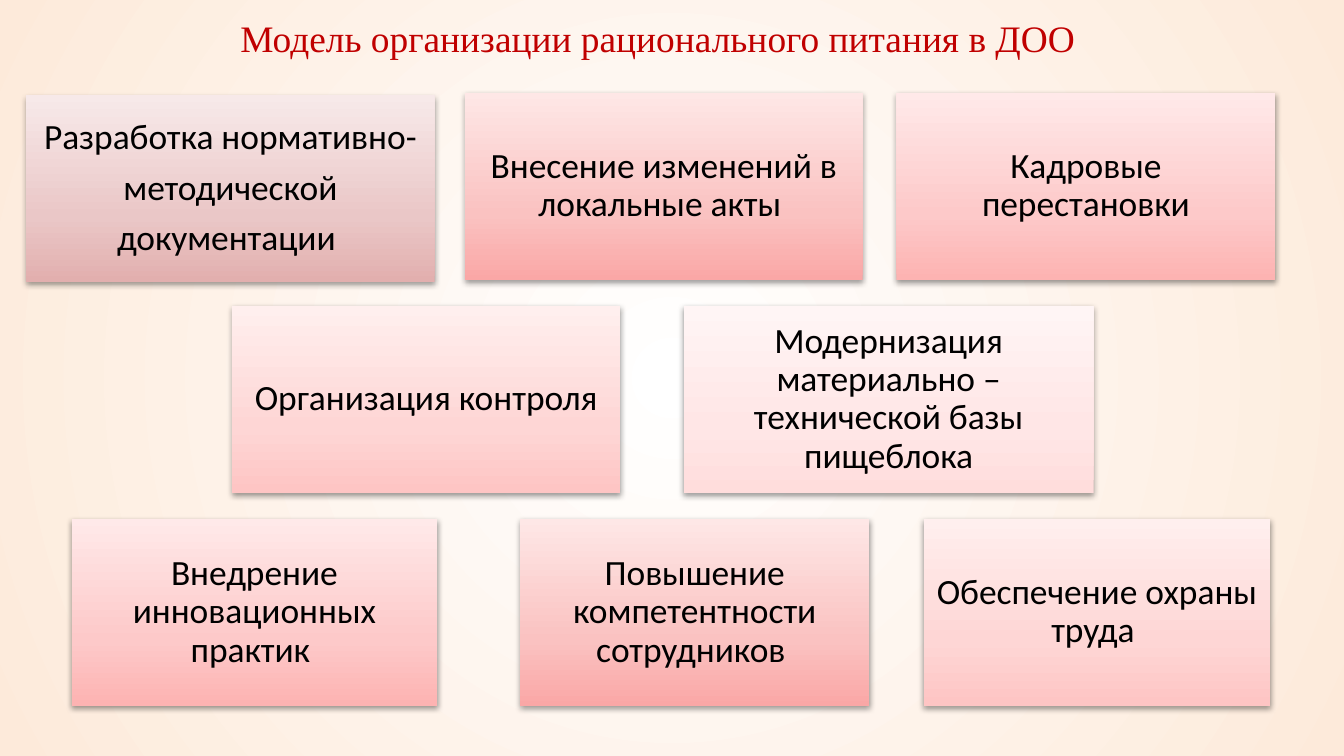
from pptx import Presentation, oxml, util as u
from pptx.dml.color import RGBColor
from pptx.enum import shapes, text
from pptx.oxml import ns

WIDTH = u.Inches(10)
HEIGHT = WIDTH * 9 // 16
COLUMN, ROW = WIDTH / 100, HEIGHT / 100
FIRST_ROW, ROW_STEP, CARD_HEIGHT = 12.3, 28.17, 24.71

MAUVE = ("E2AFAE", "EAC7C7", "F7E9E9")
CORAL = ("FAA7A6", "FAC2C1", "FEE7E6")
ROSE = ("FDB3B2", "FDC9C9", "FFE9E9")
PINK = ("FEC5C4", "FED6D5", "FFEFEE")
BLUSH = ("FFDDDC", "FFE6E6", "FFF5F5")

CARD_ROWS = [
    [
        (1.95, 30.4, 0.3, MAUVE, "Разработка нормативно-\nметодической\nдокументации "),
        (34.6, 29.6, 0, CORAL, "Внесение изменений в локальные акты "),
        (66.7, 28.2, 0, ROSE, "Кадровые перестановки"),
    ],
    [
        (17.26, 28.9, 0, PINK, "Организация контроля"),
        (50.87, 30.5, 0, BLUSH, "Модернизация материально – технической базы пищеблока"),
    ],
    [
        (5.33, 27.2, 0, ROSE, "Внедрение инновационных практик "),
        (38.7, 26, 0, CORAL, "Повышение компетентности сотрудников "),
        (68.72, 25.8, 0, PINK, "Обеспечение охраны труда "),
    ],
]


def color(value):
    """Turn a hex string into a colour."""
    return RGBColor.from_string(value)


def grid_box(left, top, width, height):
    """Convert columns and rows into slide lengths."""
    return tuple(round(v) for v in (left * COLUMN, top * ROW, width * COLUMN, height * ROW))


def set_gradient(fill, owner, stops, direction):
    """Fill an owner element with gradient stops in the given direction."""
    fill.solid()
    solid = owner.find(".//" + ns.qn("a:solidFill"))
    marks = "".join(
        f'<a:gs pos="{share * 1000}"><a:srgbClr val="{value}"/></a:gs>' for share, value in stops
    )
    gradient = oxml.parse_xml(
        f'<a:gradFill {ns.nsdecls("a")} rotWithShape="1"><a:gsLst>{marks}</a:gsLst>{direction}</a:gradFill>'
    )
    solid.getparent().replace(solid, gradient)


def add_shadow(shape):
    """Give a shape a soft shadow below it."""
    shape.shadow.inherit = False
    effects = shape._element.spPr.find(ns.qn("a:effectLst"))
    effects.append(oxml.parse_xml(
        f'<a:outerShdw {ns.nsdecls("a")} blurRad="40000" dist="20000" dir="5400000" rotWithShape="0">'
        '<a:srgbClr val="000000"><a:alpha val="38000"/></a:srgbClr></a:outerShdw>'
    ))


def style_font(font, name, size, value):
    """Set the face, size and colour of a font."""
    font.name, font.size = name, u.Pt(size)
    font.color.rgb = color(value)


def add_backdrop(page):
    """Paint the radial page background."""
    set_gradient(
        page.background.fill, page.element, [(0, "FFFFFF"), (100, "FDEADA")],
        '<a:path path="circle"><a:fillToRect l="50000" t="50000" r="50000" b="50000"/></a:path>',
    )


def add_title(page, box):
    """Write the slide heading in its box."""
    frame = page.shapes.add_textbox(*box).text_frame
    frame.word_wrap = True
    frame.auto_size = text.MSO_AUTO_SIZE.SHAPE_TO_FIT_TEXT
    frame.text = "Модель организации рационального питания в ДОО"
    style_font(frame.paragraphs[0].runs[0].font, "Times New Roman", 20, "C00000")


def add_card(page, box, tones, wording):
    """Place one shaded card with centred wording."""
    card = page.shapes.add_shape(shapes.MSO_SHAPE.RECTANGLE, *box)
    set_gradient(card.fill, card._element.spPr, zip((0, 35, 100), tones),
                 '<a:lin ang="16200000" scaled="0"/>')
    card.line.fill.background()
    add_shadow(card)
    frame = card.text_frame
    frame.word_wrap = True
    frame.vertical_anchor = text.MSO_ANCHOR.MIDDLE
    frame.margin_left = frame.margin_right = u.Inches(0.08)
    frame.margin_top = frame.margin_bottom = u.Inches(0.08)
    frame.text = wording
    for para in frame.paragraphs:
        para.alignment = text.PP_ALIGN.CENTER
        para.line_spacing = 0.9
        para.space_after = u.Pt(6.5)
        for span in para.runs:
            style_font(span.font, "Calibri", 19, "000000")


def add_card_row(page, top, cards):
    """Place a row of cards starting at the given grid row."""
    for left, width, drop, tones, wording in cards:
        add_card(page, grid_box(left, top + drop, width, CARD_HEIGHT), tones, wording)


def main():
    """Build and save the slide."""
    deck = Presentation()
    deck.slide_width, deck.slide_height = WIDTH, HEIGHT
    page = deck.slides.add_slide(deck.slide_layouts[6])
    add_backdrop(page)
    add_title(page, grid_box(16.9, 1.07, 66.1, 7.82))
    for index, cards in enumerate(CARD_ROWS):
        add_card_row(page, FIRST_ROW + index * ROW_STEP, cards)
    deck.save("out.pptx")


if __name__ == "__main__":
    main()
